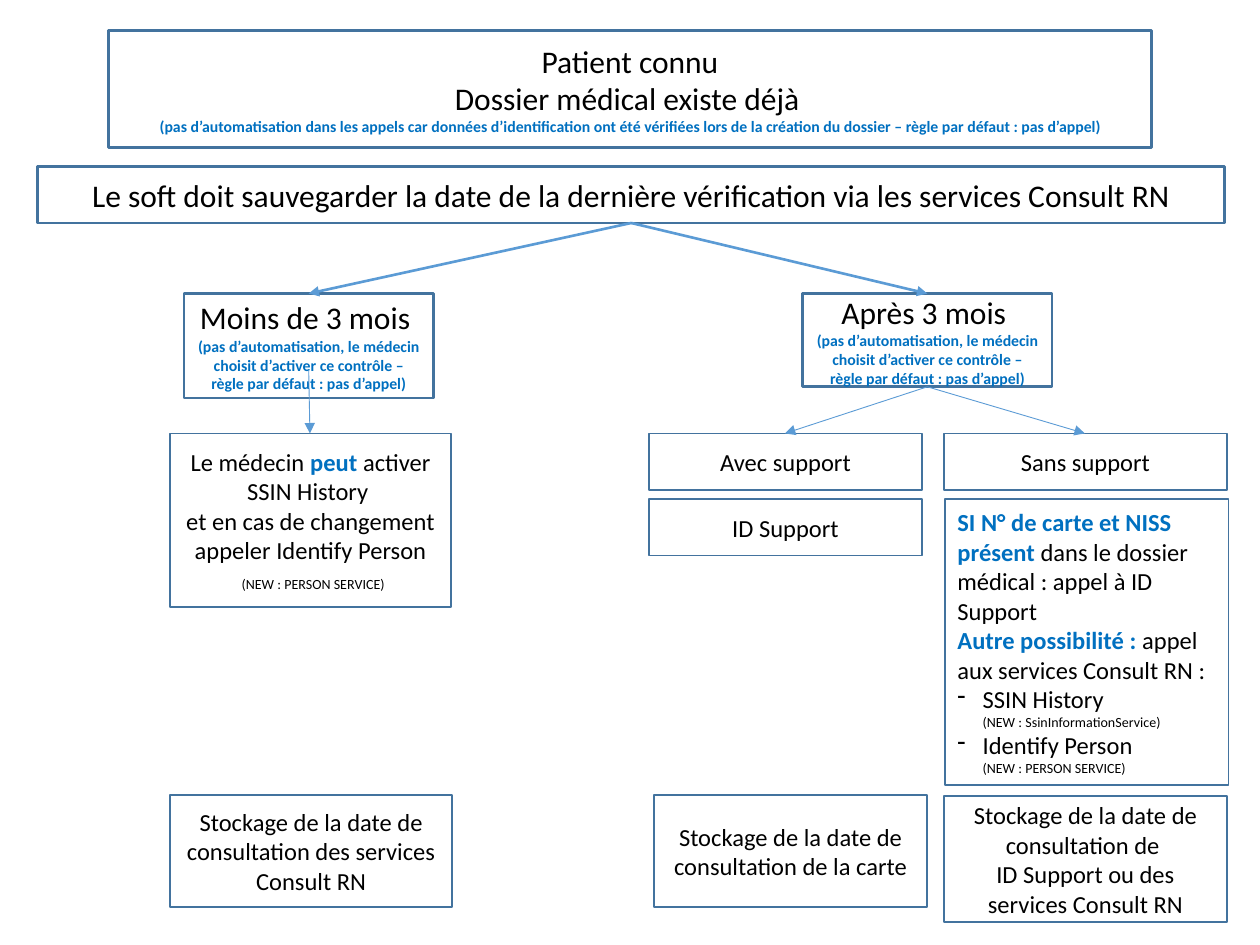
import pptx
import pptx.dml.color
import pptx.enum.shapes
import pptx.enum.text
import pptx.oxml
import pptx.oxml.ns
import pptx.util

PX = 9144  # EMU per px, 100 px to the inch
COLORS = {"text": "000000", "accent": "0070C0", "border": "43739E", "arrow": "5B9BD5"}
FONT = "Calibri"
INDENT = 20
BIG, BODY, NOTE, TINY = 18, 14, 9, 8

# A paragraph is (kind, size, runs); a run is (text, style) or (text, style, size).
def centred(size, *runs):
    return "centre", size, runs


def plain(text, size=BODY):
    return centred(size, (text, "text"))


CHOICE_NOTE = centred(NOTE, (
    "(pas d’automatisation, le médecin choisit d’activer ce contrôle – "
    "règle par défaut : pas d’appel)", "accent"))

TITLE_BOX = (86, 24, 828, 93)
TITLE = [
    plain("Patient connu", BIG),
    centred(BIG, ("Dossier médical existe déjà", "text"), (" ", "text", BODY)),
    centred(NOTE, (
        "(pas d’automatisation dans les appels car données d’identification ont été "
        "vérifiées lors de la création du dossier – règle par défaut : pas d’appel)",
        "accent")),
]

# name: (left, top, width, height), border in points, paragraphs
BOXES = {
    "recent": ((146, 233, 198, 83), 1.5, [plain("Moins de 3 mois ", BIG), CHOICE_NOTE]),
    "older": ((637, 233, 198, 74), 1.5, [plain("Après 3 mois ", BIG), CHOICE_NOTE]),
    "with support": ((515, 344, 217, 45), 1, [plain("Avec support")]),
    "without support": ((749, 344, 225, 45), 1, [plain("Sans support")]),
    "id support": ((515, 396, 217, 45), 1, [plain("ID Support")]),
    "doctor may": ((135, 344, 223, 138), 1, [
        centred(BODY, ("Le médecin", "text"), (" peut ", "accent"),
                ("activer SSIN History ", "text")),
        plain("et en cas de changement"),
        plain("appeler Identify Person"),
        centred(BODY, (" ", "text"), ("(NEW : PERSON SERVICE)", "text", TINY)),
    ]),
    "card or services": ((750, 396, 225, 227), 1, [
        ("left", BODY, [("SI N° de carte et NISS présent ", "accent"),
                        ("dans le dossier médical : appel à ID Support", "text")]),
        ("left", BODY, [("Autre possibilité : ", "accent"),
                        ("appel aux services Consult RN :", "text")]),
        ("bullet", BODY, [("SSIN History", "text")]),
        ("indented", TINY, [("(NEW : SsinInformationService)", "text")]),
        ("bullet", BODY, [("Identify Person", "text")]),
        ("indented", TINY, [("(NEW : PERSON SERVICE)", "text")]),
    ]),
    "store services": ((135, 631, 224, 89), 1, [
        plain("Stockage de la date de consultation des services Consult RN")]),
    "store card": ((519, 631, 217, 89), 1, [
        plain("Stockage de la date de consultation de la carte")]),
    "store either": ((749, 632, 225, 100), 1, [
        plain("Stockage de la date de consultation de "),
        plain("ID Support ou des services Consult RN")]),
    "last check": ((30, 132, 942, 45), 1.5, [
        plain("Le soft doit sauvegarder la date de la dernière vérification "
              "via les services Consult RN", BIG)]),
}

# from box, to box, width in points, how far above the bottom edge it starts
ARROWS = [
    ("last check", "recent", 1.5, 0),
    ("last check", "older", 1.5, 0),
    ("recent", "doctor may", 0.5, 22),
    ("older", "with support", 0.5, 0),
    ("older", "without support", 0.5, 0),
]


def rgb(name):
    return pptx.dml.color.RGBColor.from_string(COLORS[name])


def add_xml(parent, tag, **attributes):
    element = pptx.oxml.parse_xml(f"<a:{tag} {pptx.oxml.ns.nsdecls('a')}/>")
    for key, value in attributes.items():
        element.set(key, str(value))
    parent.append(element)


def fill_paragraph(paragraph, kind, size, runs):
    align = pptx.enum.text.PP_ALIGN
    paragraph.alignment = align.CENTER if kind == "centre" else align.LEFT
    paragraph.font.name = FONT
    paragraph.font.size = pptx.util.Pt(size)
    for text, style, *own_size in runs:
        run = paragraph.add_run()
        run.text = text
        run.font.name = FONT
        run.font.size = pptx.util.Pt(own_size[0] if own_size else size)
        run.font.bold = style == "accent"
        run.font.color.rgb = rgb(style)
    properties = paragraph._p.get_or_add_pPr()
    if kind in ("bullet", "indented"):
        properties.set("marL", str(INDENT * PX))
        properties.set("indent", str(-INDENT * PX if kind == "bullet" else 0))
    if kind == "bullet":
        # Bullets come before the default run properties in the schema.
        defaults = properties.find(pptx.oxml.ns.qn("a:defRPr"))
        add_xml(properties, "buFontTx")
        add_xml(properties, "buChar", char="-")
        properties.append(defaults)


def format_box(shape, border, paragraphs):
    shape.fill.background()
    shape.line.color.rgb = rgb("border")
    shape.line.width = pptx.util.Pt(border)
    frame = shape.text_frame
    frame.word_wrap = True
    frame.auto_size = pptx.enum.text.MSO_AUTO_SIZE.NONE
    frame.vertical_anchor = pptx.enum.text.MSO_ANCHOR.MIDDLE
    for index, content in enumerate(paragraphs):
        paragraph = frame.add_paragraph() if index else frame.paragraphs[0]
        fill_paragraph(paragraph, *content)


def add_arrow(slide, source, target, width, lift):
    left, top, box_width, height = BOXES[source][0]
    start = (left + box_width // 2, top + height - lift)
    left, top, box_width, height = BOXES[target][0]
    end = (left + box_width // 2, top)
    connector = slide.shapes.add_connector(
        pptx.enum.shapes.MSO_CONNECTOR.STRAIGHT, *(value * PX for value in start + end))
    connector.line.color.rgb = rgb("arrow")
    connector.line.width = pptx.util.Pt(width)
    add_xml(connector.line._get_or_add_ln(), "tailEnd", type="triangle")
    add_xml(connector._element.spPr, "effectLst")


def main():
    presentation = pptx.Presentation()
    presentation.slide_width, presentation.slide_height = 1000 * PX, 750 * PX
    slide = presentation.slides.add_slide(presentation.slide_layouts.get_by_name("Title Only"))

    title = slide.shapes.title
    title.left, title.top, title.width, title.height = (value * PX for value in TITLE_BOX)
    format_box(title, 1.5, TITLE)

    for position, border, paragraphs in BOXES.values():
        shape = slide.shapes.add_shape(
            pptx.enum.shapes.MSO_SHAPE.RECTANGLE, *(value * PX for value in position))
        shape.shadow.inherit = False
        format_box(shape, border, paragraphs)
    for arrow in ARROWS:
        add_arrow(slide, *arrow)

    presentation.save("out.pptx")


if __name__ == "__main__":
    main()
